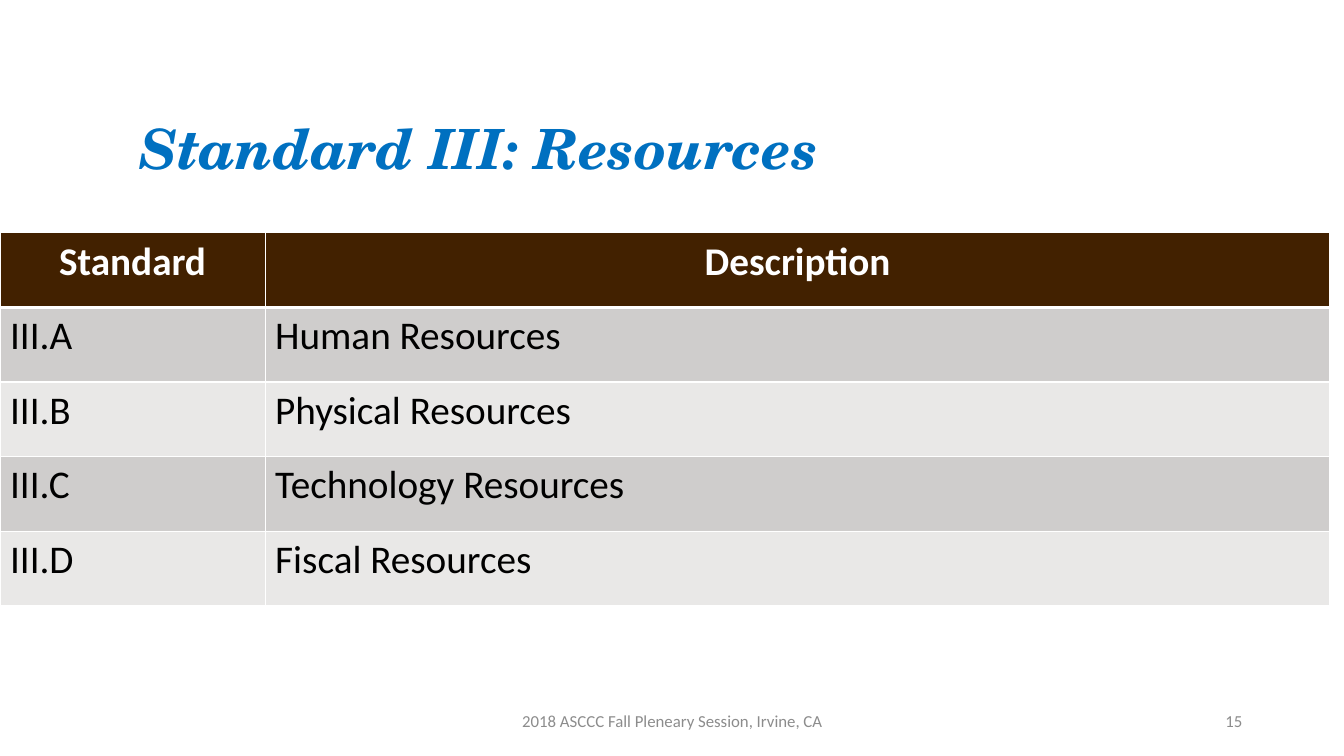
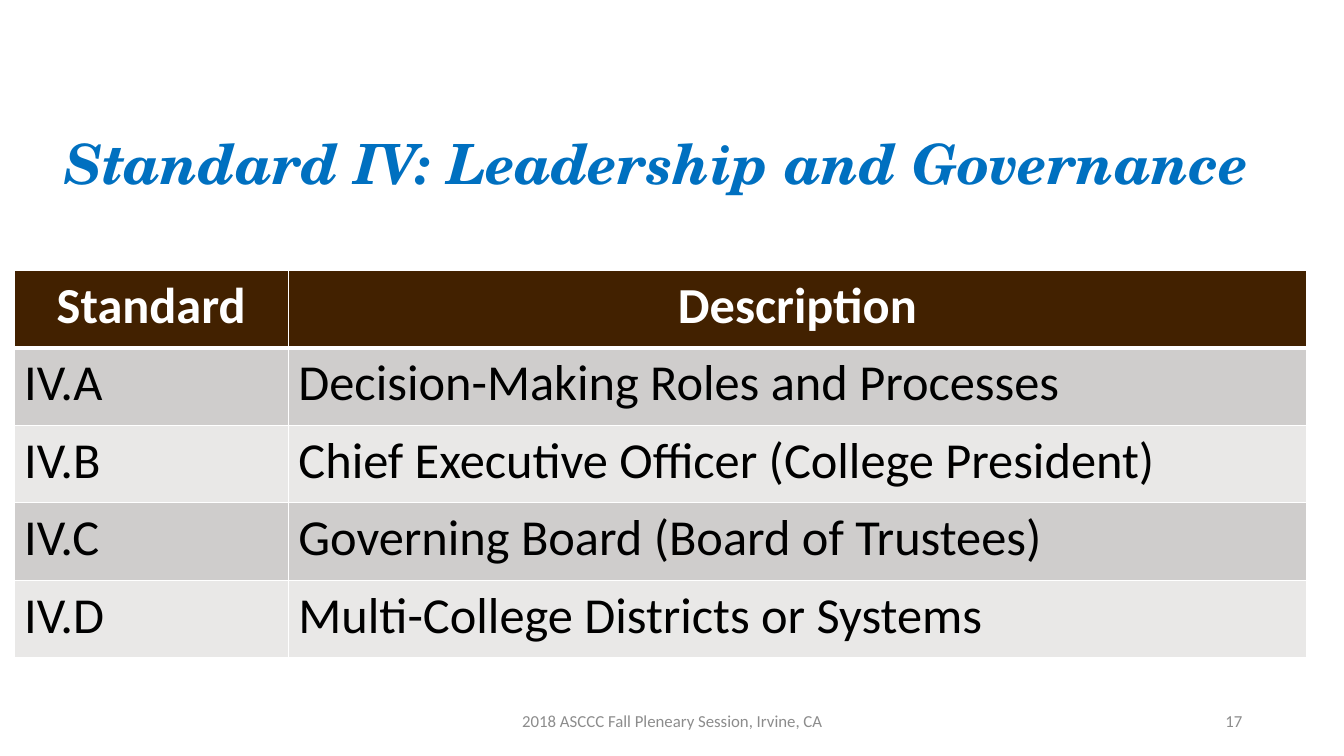
from lxml.etree import SubElement
from pptx import Presentation
from pptx.dml.color import RGBColor
from pptx.enum.text import MSO_ANCHOR as Anchor, MSO_AUTO_SIZE as AutoSize, PP_ALIGN as Align
from pptx.oxml.ns import qn
from pptx.util import Inches, Pt

TITLE_FONT, BODY_FONT = "TeX Gyre Schola", "Calibri"
BLUE, BROWN, WHITE, BLACK, GRAY = "0070C0", "422100", "FFFFFF", "000000", "8C8C8C"
BANDS = ("CFCDCC", "E9E8E7")
HEADER = ("Standard", "Description")
FOOTER = "2018 ASCCC Fall Pleneary Session, Irvine, CA"

SLIDES = [
    {
        "title": "Standard III: Resources",
        "title_box": (0, 1.09, 9.69, 1),
        "title_lift": 0.23,
        "number": "15",
        "origin": (0, 2.31),
        "columns": (2.63, 10.56),
        "row_height": 0.74,
        "size": 28,
        "rows": [
            ("III.A", "Human Resources"),
            ("III.B", "Physical Resources"),
            ("III.C", "Technology Resources"),
            ("III.D", "Fiscal Resources"),
        ],
    },
    {
        "title": "Standard IV: Leadership and Governance",
        "title_box": (0.14, 1.1, 12.93, 1.16),
        "title_lift": 0.1,
        "number": "17",
        "origin": (0.14, 2.68),
        "columns": (2.72, 10.1),
        "row_height": 0.77,
        "size": 36,
        "rows": [
            ("IV.A", "Decision-Making Roles and Processes"),
            ("IV.B", "Chief Executive Officer (College President)"),
            ("IV.C", "Governing Board (Board of Trustees)"),
            ("IV.D", "Multi-College Districts or Systems"),
        ],
    },
]


def color(value):
    return RGBColor.from_string(value)


def write(frame, text, font, size, ink, align, bold=False, italic=False):
    paragraph = frame.paragraphs[0]
    paragraph.alignment = align
    run = paragraph.add_run()
    run.text = text
    run.font.name = font
    run.font.size = Pt(size)
    run.font.color.rgb = color(ink)
    run.font.bold = bold
    run.font.italic = italic
    return paragraph


def add_title(slide, content):
    title = slide.shapes.title
    title.left, title.top, title.width, title.height = map(Inches, content["title_box"])
    frame = title.text_frame
    frame.auto_size = AutoSize.NONE
    frame.word_wrap = True
    frame.vertical_anchor = Anchor.MIDDLE
    frame.margin_right = Inches(0.29)
    frame.margin_bottom = Inches(content["title_lift"])
    paragraph = write(frame, content["title"], TITLE_FONT, 39.6, BLUE, Align.CENTER, True, True)
    paragraph.line_spacing = 0.9


def add_borders(cell, widths):
    properties = cell._tc.get_or_add_tcPr()
    for side, width in zip("LRTB", widths):
        line = SubElement(properties, qn(f"a:ln{side}"), w=str(Pt(width)))
        fill = SubElement(line, qn("a:solidFill"))
        SubElement(fill, qn("a:srgbClr"), val=WHITE)


def add_standards_table(slide, content):
    rows = [HEADER] + content["rows"]
    columns = content["columns"]
    left, top = content["origin"]
    height = content["row_height"]
    table = slide.shapes.add_table(
        len(rows), len(columns), Inches(left), Inches(top),
        Inches(sum(columns)), Inches(height * len(rows)),
    ).table
    for column, width in zip(table.columns, columns):
        column.width = Inches(width)
    for index, texts in enumerate(rows):
        table.rows[index].height = Inches(height)
        header = index == 0
        for column, text in enumerate(texts):
            cell = table.cell(index, column)
            add_borders(cell, (1, 1, 3 if index == 1 else 1, 3 if header else 1))
            cell.fill.solid()
            cell.fill.fore_color.rgb = color(BROWN if header else BANDS[(index - 1) % 2])
            write(cell.text_frame, text, BODY_FONT, content["size"],
                  WHITE if header else BLACK,
                  Align.CENTER if header else Align.LEFT, header)


def add_footer(slide, text, left, width, align):
    box = slide.shapes.add_textbox(Inches(left), Inches(6.95), Inches(width), Inches(0.4))
    frame = box.text_frame
    frame.word_wrap = True
    frame.vertical_anchor = Anchor.MIDDLE
    write(frame, text, BODY_FONT, 12, GRAY, align)


def main():
    presentation = Presentation()
    presentation.slide_width = Inches(13.33)
    presentation.slide_height = Inches(7.5)
    title_only = presentation.slide_layouts[5]
    for content in SLIDES:
        slide = presentation.slides.add_slide(title_only)
        add_title(slide, content)
        add_standards_table(slide, content)
        add_footer(slide, FOOTER, 4.42, 4.5, Align.CENTER)
        add_footer(slide, content["number"], 9.42, 3, Align.RIGHT)
    presentation.save("out.pptx")


if __name__ == "__main__":
    main()
